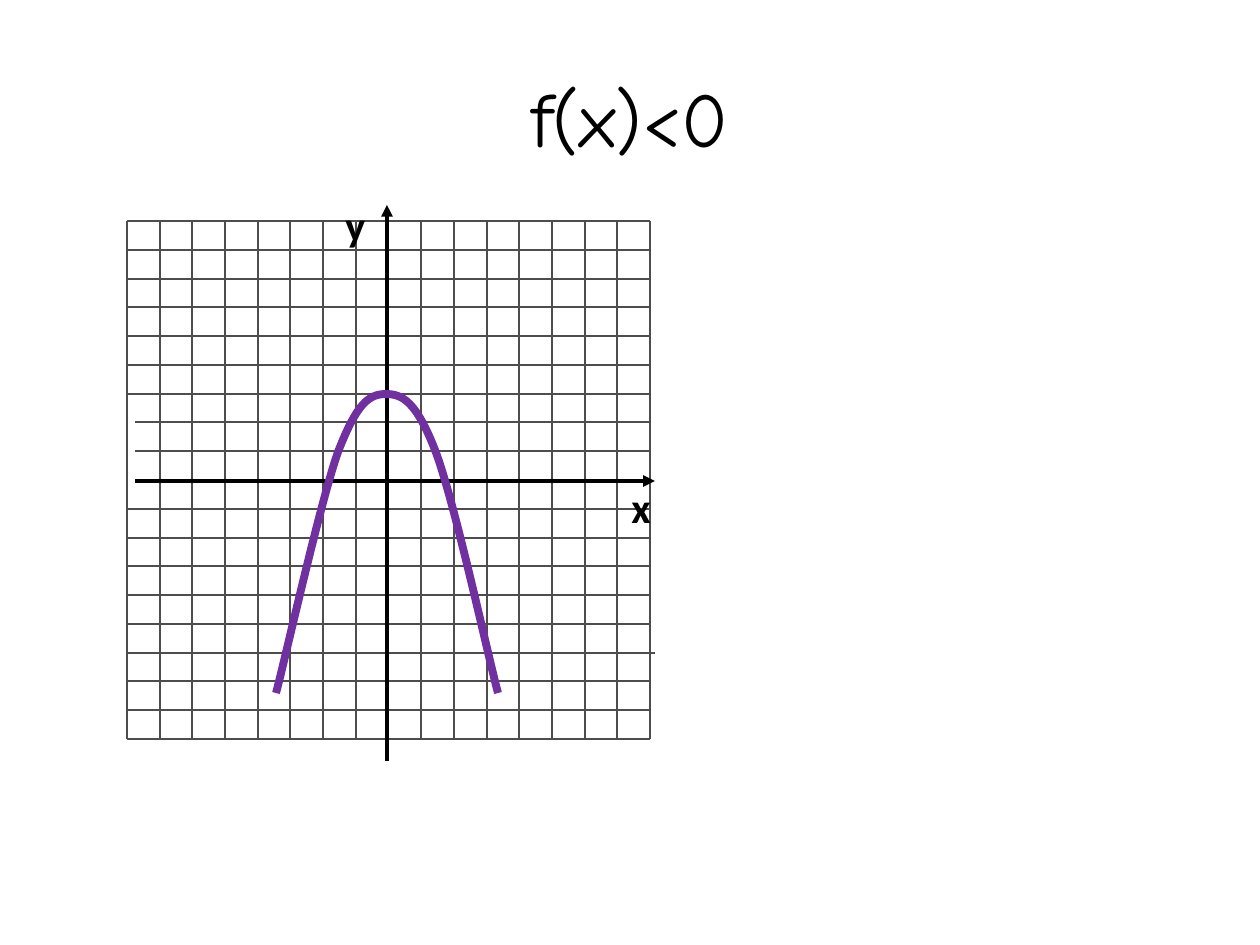
"""Build a slide with a downward parabola on a ruled grid for f(x)<0."""
from lxml.etree import SubElement as Sub
from pptx import Presentation
from pptx.dml.color import RGBColor as Rgb
from pptx.enum.shapes import MSO_CONNECTOR as Conn
from pptx.enum.text import MSO_ANCHOR as Anchor, MSO_AUTO_SIZE as Auto, PP_ALIGN as Align
from pptx.oxml.ns import qn
from pptx.util import Inches, Pt

PX = Inches(1) / 126
HUES = {"ink": "000000", "grid": "4D4D4D", "curve": "7030A0"}
TITLE = ("f(x)<0", (63, 38, 1134, 157), {"name": "Comic Neue", "size": Pt(44), "bold": False})
MARK = {"name": "Calibri", "size": Pt(24), "bold": True}
MARKS = [("у", (333, 193, 38, 47)), ("х", (619, 475, 38, 47))]
GRID = {"left": 127, "top": 221, "right": 650, "bottom": 739, "cols": 16, "rows": 18}
AXIS_COL, AXIS_ROW = 8, 9
LEFTS = {7: 135, 8: 135}
RIGHTS = {15: 655}
AXES = [((135, 481), (655, 481)), ((387, 761), (387, 205))]
CURVE = [
    (276, 693),
    (284, 664), (320, 503), (338, 452),
    (357, 403), (369, 394), (386, 394),
    (402, 394), (416, 401), (435, 450),
    (454, 499), (488, 656), (498, 693),
]


def emu(*vals):
    return [round(v * PX) for v in vals]


def rule(shapes, start, end, hue, width, arrow=False):
    line = shapes.add_connector(Conn.STRAIGHT, *emu(*start, *end))
    line.line.color.rgb = Rgb.from_string(HUES[hue])
    line.line.width = Pt(width)
    if arrow:
        Sub(line.line._get_or_add_ln(), qn("a:tailEnd"), type="triangle")
    Sub(line._element.spPr, qn("a:effectLst"))


def write(frame, text, style):
    para = frame.paragraphs[0]
    run = para.add_run()
    run.text = text
    for key, val in style.items():
        setattr(run.font, key, val)
    run.font.color.rgb = Rgb.from_string(HUES["ink"])
    return para


def head(shape):
    text, box, style = TITLE
    for key, val in zip(("left", "top", "width", "height"), emu(*box)):
        setattr(shape, key, val)
    shape.text_frame.vertical_anchor = Anchor.MIDDLE
    write(shape.text_frame, text, style).alignment = Align.CENTER


def grid(shapes):
    left, top, right, bottom, cols, rows = GRID.values()
    for row in range(rows + 1):
        if row != AXIS_ROW:
            y = round(top + (bottom - top) * row / rows)
            start, end = LEFTS.get(row, left), RIGHTS.get(row, right)
            rule(shapes, (start, y), (end, y), "grid", 1)
    for col in range(cols + 1):
        if col != AXIS_COL:
            x = round(left + (right - left) * col / cols)
            rule(shapes, (x, top), (x, bottom), "grid", 1)


def curve(shapes):
    pen = shapes.build_freeform(*CURVE[0], scale=PX)
    pen.add_line_segments(CURVE[1:], close=False)
    shape = pen.convert_to_shape()
    shape.shadow.inherit = False
    shape.fill.background()
    shape.line.color.rgb = Rgb.from_string(HUES["curve"])
    shape.line.width = Pt(4.5)
    steps = list(shape._element.iter(qn("a:lnTo")))
    for i in range(0, len(steps), 3):
        bend = Sub(steps[i].getparent(), qn("a:cubicBezTo"))
        for step in steps[i:i + 3]:
            bend.append(step[0])
            step.getparent().remove(step)


def main():
    deck = Presentation()
    deck.slide_width, deck.slide_height = Inches(10), Inches(7.5)
    slide = deck.slides.add_slide(deck.slide_layouts[5])
    shapes = slide.shapes
    head(shapes.title)
    grid(shapes)
    for start, end in AXES:
        rule(shapes, start, end, "ink", 2.25, arrow=True)
    for text, box in MARKS:
        frame = shapes.add_textbox(*emu(*box)).text_frame
        frame.word_wrap = False
        frame.auto_size = Auto.SHAPE_TO_FIT_TEXT
        write(frame, text, MARK)
    curve(shapes)
    deck.save("out.pptx")


if __name__ == "__main__":
    main()
